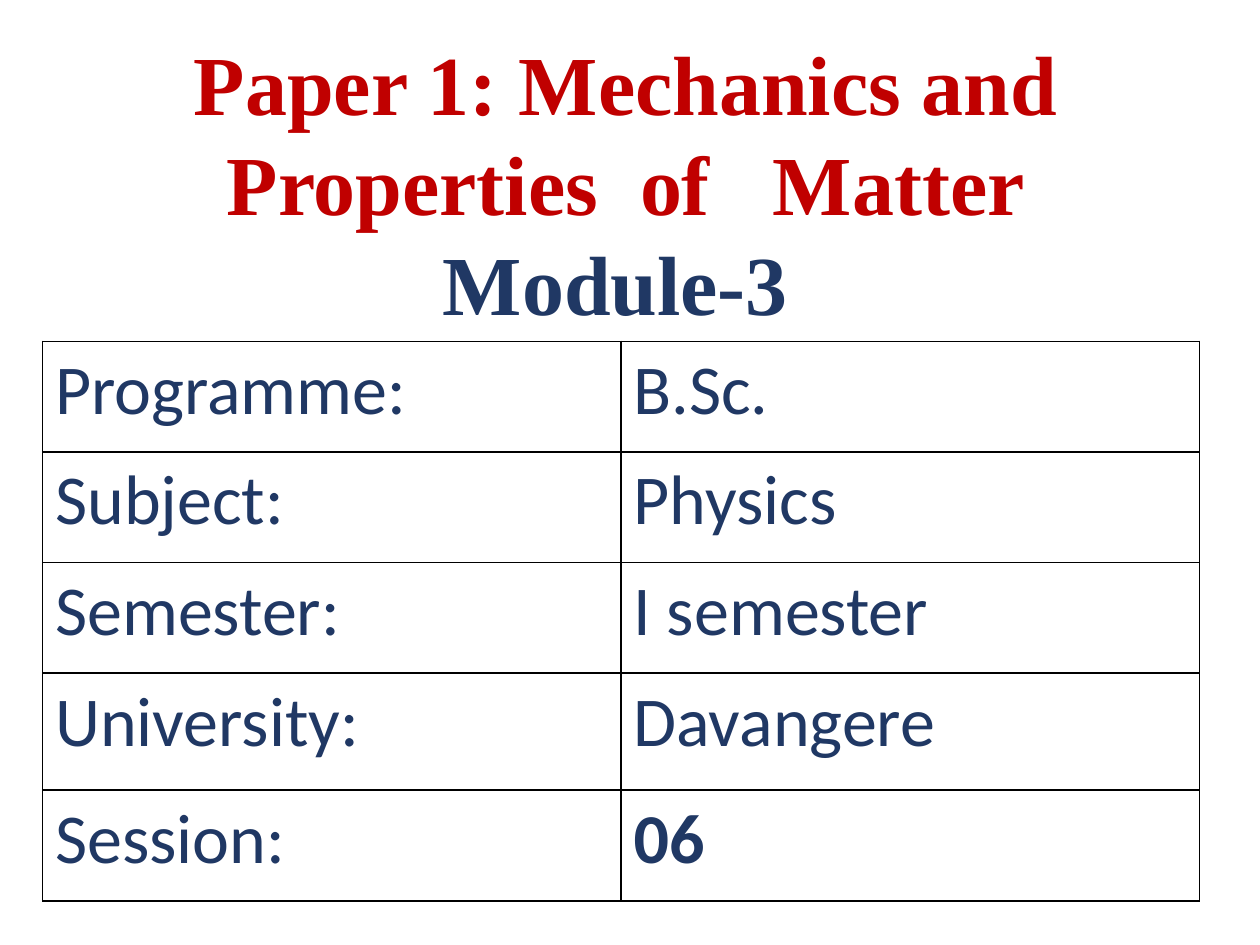
from lxml.etree import SubElement
from pptx import Presentation
from pptx.dml.color import RGBColor
from pptx.enum.text import MSO_ANCHOR, PP_ALIGN
from pptx.oxml.ns import qn
from pptx.util import Cm, Pt

RED = "C00000"
NAVY = "203864"
BLACK = "000000"
WHITE = "FFFFFF"

COURSE_DETAILS = [
    ("Programme:", "B.Sc."),
    ("Subject:", "Physics"),
    ("Semester:", "I semester"),
    ("University:", "Davangere"),
    ("Session:", "06"),
]
ROW_HEIGHTS = [2.23, 2.23, 2.23, 2.36, 2.23]


def color(value):
    return RGBColor.from_string(value)


def format_span(span, font_name, size, fill, bold=False):
    span.font.name = font_name
    span.font.size = Pt(size)
    span.font.bold = bold
    span.font.color.rgb = color(fill)


def add_title(page):
    box = page.shapes.add_textbox(Cm(0.3), Cm(0.91), Cm(24.64), Cm(5.97))
    frame = box.text_frame
    frame.word_wrap = True
    frame.vertical_anchor = MSO_ANCHOR.BOTTOM
    paragraph = frame.paragraphs[0]
    paragraph.text = "Paper 1: Mechanics and Properties  of   Matter\vModule-3 "
    paragraph.alignment = PP_ALIGN.CENTER
    paragraph.line_spacing = 0.99
    for span, fill in zip(paragraph.runs, (RED, NAVY)):
        format_span(span, "Times New Roman", 48, fill, bold=True)


def set_borders(cell, width, line_color):
    properties = cell._tc.get_or_add_tcPr()
    for position, side in enumerate(("a:lnL", "a:lnR", "a:lnT", "a:lnB")):
        line = SubElement(properties, qn(side), w=str(Pt(width)))
        properties.insert(position, line)
        fill = SubElement(line, qn("a:solidFill"))
        SubElement(fill, qn("a:srgbClr"), val=line_color)


def fill_cell(cell, text, bold):
    cell.text_frame.text = text
    format_span(cell.text_frame.paragraphs[0].runs[0], "Calibri", 40, NAVY, bold)
    cell.fill.solid()
    cell.fill.fore_color.rgb = color(WHITE)
    set_borders(cell, 1, BLACK)


def add_details_table(page):
    frame = page.shapes.add_table(
        len(COURSE_DETAILS), 2, Cm(0.86), Cm(6.88), Cm(23.32), Cm(sum(ROW_HEIGHTS))
    )
    table = frame.table
    for row, height in zip(table.rows, ROW_HEIGHTS):
        row.height = Cm(height)
    for row_index, details in enumerate(COURSE_DETAILS):
        for column_index, text in enumerate(details):
            fill_cell(table.cell(row_index, column_index), text, bold=text == "06")


def main():
    deck = Presentation()
    deck.slide_width = Cm(25.4)
    deck.slide_height = Cm(19.05)
    page = deck.slides.add_slide(deck.slide_layouts[6])
    add_title(page)
    add_details_table(page)
    deck.save("out.pptx")


if __name__ == "__main__":
    main()
